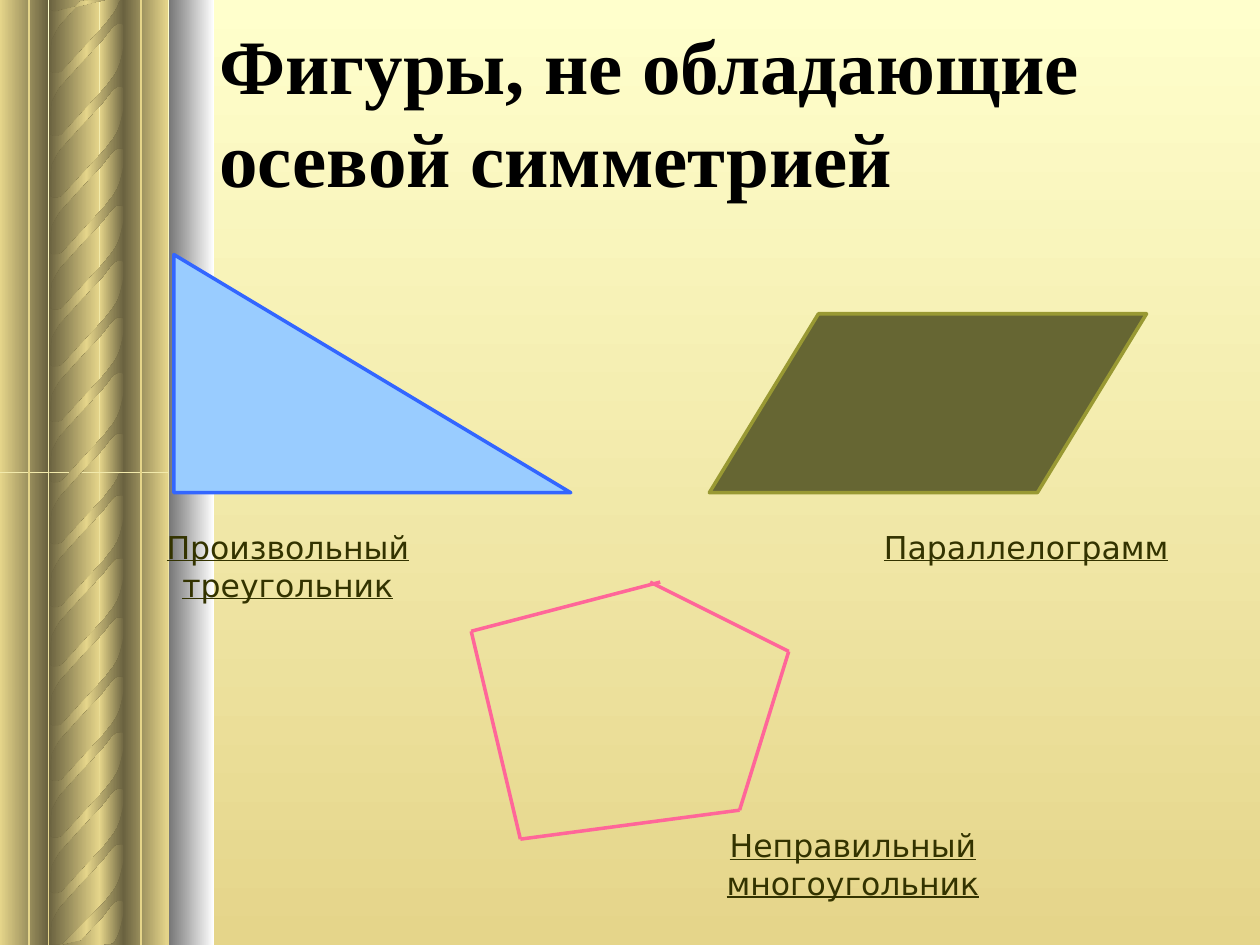
from copy import deepcopy

from lxml.etree import SubElement
from pptx import Presentation
from pptx.dml.color import RGBColor
from pptx.enum.shapes import MSO_CONNECTOR as Connector, MSO_SHAPE as Shape
from pptx.enum.text import MSO_ANCHOR as Anchor, MSO_AUTO_SIZE as AutoSize, PP_ALIGN as Align
from pptx.oxml.ns import qn
from pptx.util import Inches, Pt

GOLD, SHADE = "E5D58A", "6A6240"
HALF = 3.75
ROPE_LEFT = 0.39

# One twist of the rope, measured from the left and top of its own box.
TWIST = [
    (0.59, 0.09), (0.59, 0.33), (0.58, 0.32), (0.54, 0.32), (0.52, 0.33), (0.49, 0.36),
    (0.42, 0.45), (0.25, 0.63), (0.08, 0.82), (0.05, 0.87), (0.02, 0.93), (0.01, 1.01),
    (0, 1.12), (0, 0.63), (0, 0.68), (0.01, 0.7), (0.03, 0.71), (0.05, 0.71),
    (0.07, 0.71), (0.1, 0.7), (0.44, 0.33), (0.51, 0.24), (0.54, 0.19), (0.56, 0.14),
    (0.58, 0.06), (0.59, 0), (0.59, 0.2),
]
# Left, width and gradient of the column's vertical strips.
STRIPS = [
    (0.79, 0.2, (GOLD, SHADE)),
    (0, 0.38, (GOLD, SHADE)),
    (0.39, 0.4, (SHADE, GOLD)),
    (0.98, 0.35, (SHADE, GOLD)),
]
# Top of each column half, and the tops of the twists that start in it.
COLUMN_HALVES = [
    (HALF, [4.58, 5.05, 5.49, 5.94, 6.38, 6.83, 4.11, 3.61]),
    (0, [0.86, 1.31, 1.75, 2.2, 2.64, 7.25, 0.37, -0.13, -0.62, 3.12]),
]
POLYGON_SIDES = [
    ((3.74, 5.01), (5.24, 4.62)),
    ((5.16, 4.62), (6.26, 5.17)),
    ((3.74, 5.01), (4.13, 6.66)),
    ((4.13, 6.66), (5.87, 6.43)),
    ((5.87, 6.43), (6.26, 5.17)),
]
LABELS = [
    ("Произвольный треугольник", (0.67, 4.14, 3.23, 0.7)),
    ("Параллелограмм", (6.57, 4.14, 3.15, 0.4)),
    ("Неправильный многоугольник", (5.55, 6.51, 2.44, 0.7)),
]


def color(value):
    return RGBColor.from_string(value)


def inches(values):
    return [Inches(value) for value in values]


class SlideBuilder:
    title_font = "Times New Roman"
    label_font = "DejaVu Sans"
    label_color = "333300"

    def __init__(self, slide):
        self.slide = slide
        self.shapes = slide.shapes

    def background(self, top, bottom):
        fill = self.slide.background.fill
        fill.gradient()
        fill.gradient_angle = 270
        for stop, value in zip(fill.gradient_stops, (top, bottom)):
            stop.color.rgb = color(value)

    def gradient(self, shape, colors):
        """Fill a borderless shape from left to right with evenly spaced colours."""
        shape.shadow.inherit = False
        shape.line.fill.background()
        shape.fill.gradient()
        shape.fill.gradient_angle = 0
        stop_list = next(shape._element.iter(qn("a:gsLst")))
        for _ in colors[2:]:
            stop_list.append(deepcopy(stop_list[-1]))
        for index, (stop, value) in enumerate(zip(shape.fill.gradient_stops, colors)):
            stop.position = index / (len(colors) - 1)
            stop.color.rgb = color(value)

    def strip(self, left, top, width, height, colors):
        box = inches((left, top, width, height))
        self.gradient(self.shapes.add_shape(Shape.RECTANGLE, *box), colors)

    def twist(self, top, upper_limit, lower_limit):
        """Draw one rope twist, cut off at the given heights."""
        points = [
            (Inches(ROPE_LEFT + x), Inches(min(max(top + y, upper_limit), lower_limit)))
            for x, y in TWIST
        ]
        builder = self.shapes.build_freeform(*points[0])
        builder.add_line_segments(points[1:])
        self.gradient(builder.convert_to_shape(), (SHADE, GOLD, SHADE))

    def line(self, start, end, line_color, width):
        connector = self.shapes.add_connector(Connector.STRAIGHT, *inches(start + end))
        connector.line.color.rgb = color(line_color)
        connector.line.width = Pt(width)
        SubElement(connector._element.spPr, qn("a:effectLst"))

    def figure(self, kind, box, fill_color, line_color):
        shape = self.shapes.add_shape(kind, *inches(box))
        shape.shadow.inherit = False
        shape.fill.solid()
        shape.fill.fore_color.rgb = color(fill_color)
        shape.line.color.rgb = color(line_color)
        shape.line.width = Pt(2)
        return shape

    def run(self, paragraph, text, font_name, size, font_color):
        run = paragraph.add_run()
        run.text = text
        run.font.name = font_name
        run.font.size = Pt(size)
        run.font.color.rgb = color(font_color)
        return run

    def title(self, text, box):
        title = self.shapes.title
        title.left, title.top, title.width, title.height = inches(box)
        frame = title.text_frame
        frame.vertical_anchor = Anchor.MIDDLE
        frame.auto_size = AutoSize.NONE
        paragraph = frame.paragraphs[0]
        paragraph.alignment = Align.LEFT
        self.run(paragraph, text, self.title_font, 44, "000000").font.bold = True

    def label(self, text, box):
        frame = self.shapes.add_textbox(*inches(box)).text_frame
        frame.word_wrap = True
        frame.auto_size = AutoSize.SHAPE_TO_FIT_TEXT
        paragraph = frame.paragraphs[0]
        paragraph.alignment = Align.CENTER
        run = self.run(paragraph, text, self.label_font, 18, self.label_color)
        run.font.underline = True


def main():
    presentation = Presentation()
    presentation.slide_width, presentation.slide_height = inches((10, 7.5))
    builder = SlideBuilder(presentation.slides.add_slide(presentation.slide_layouts[5]))
    builder.background("FFFFCC", GOLD)

    for half_top, twist_tops in COLUMN_HALVES:
        for left, width, colors in STRIPS:
            builder.strip(left, half_top, width, HALF, colors)
        for top in twist_tops:
            builder.twist(top, half_top, 2 * HALF)
    builder.strip(1.34, 0, 0.36, 7.5, ("767676", "FFFFFF"))
    for x in (0.23, 1.12):
        builder.line((x, 0), (x, 7.5), GOLD, 1)

    builder.title("Фигуры, не обладающие осевой симметрией", (1.64, 0.25, 8.19, 1.25))
    parallelogram = builder.figure(
        Shape.PARALLELOGRAM, (5.63, 2.49, 3.47, 1.42), "666633", "999933")
    parallelogram.adjustments[0] = 0.61
    for start, end in POLYGON_SIDES:
        builder.line(start, end, "FF6699", 2)
    builder.figure(Shape.RIGHT_TRIANGLE, (1.38, 2.02, 3.15, 1.89), "99CCFF", "3366FF")
    for text, box in LABELS:
        builder.label(text, box)

    presentation.save("out.pptx")


if __name__ == "__main__":
    main()
